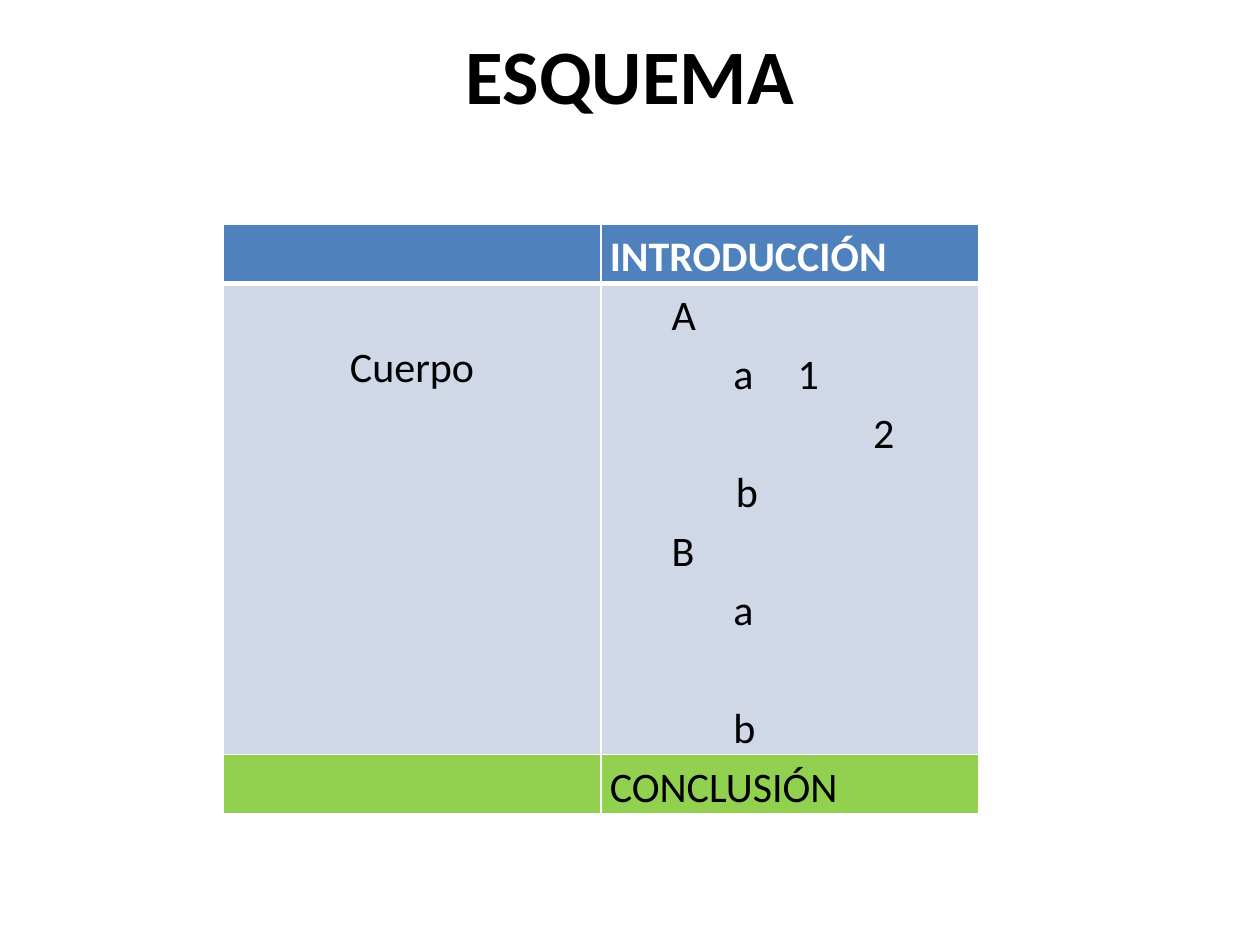
"""Build the ESQUEMA slide: a title above a three-row outline table."""
from dataclasses import dataclass

from lxml.etree import SubElement
from pptx import Presentation
from pptx.dml.color import RGBColor
from pptx.enum.text import MSO_ANCHOR as Anchor, PP_ALIGN as Align
from pptx.oxml.ns import qn
from pptx.table import _Cell as Cell
from pptx.text.text import _Paragraph as Paragraph
from pptx.util import Inches, Pt

BLACK = RGBColor(0x00, 0x00, 0x00)
WHITE = RGBColor(0xFF, 0xFF, 0xFF)
BLUE = RGBColor(0x4F, 0x81, 0xBD)
PALE = RGBColor(0xD0, 0xD8, 0xE8)
GREEN = RGBColor(0x92, 0xD0, 0x50)
STEP = 0.49


@dataclass(frozen=True)
class Line:
    text: str
    left: float = 0
    indent: float = 0
    before: float = 0
    align: Align = Align.LEFT


@dataclass(frozen=True)
class Band:
    height: float
    fill: RGBColor
    label: tuple[Line, ...]
    outline: tuple[Line, ...]
    color: RGBColor = BLACK
    bold: bool = False
    bottom_border: float = 1
    label_top: float = 0


BANDS = (
    Band(0.47, BLUE, (), (Line("INTRODUCCIÓN"),), WHITE, True, 3),
    Band(3.74, PALE, (Line("Cuerpo", align=Align.CENTER),), (
        Line("A", STEP),
        Line("a\t1", STEP, STEP),
        Line("2", 2.09),
        Line("b", 1),
        Line("B", STEP),
        Line("a", STEP, STEP),
        Line("b", STEP, STEP, before=33.7),
    ), label_top=0.41),
    Band(0.47, GREEN, (), (Line("CONCLUSIÓN"),)),
)


def style(target: object, values: dict[str, object]) -> None:
    """Set every named attribute on the target."""
    for name, value in values.items():
        setattr(target, name, value)


def write(para: Paragraph, text: str, size: float, color: RGBColor, bold: bool) -> None:
    """Add one formatted span to a paragraph."""
    span = para.add_run()
    span.text = text
    style(span.font, {"name": "Calibri", "size": Pt(size), "bold": bold})
    span.font.color.rgb = color


def draw_borders(cell: Cell, bottom: float) -> None:
    """Give the cell white borders, with its own bottom width."""
    properties = cell._tc.get_or_add_tcPr()
    widths = {"a:lnL": 1, "a:lnR": 1, "a:lnT": 1, "a:lnB": bottom}
    for position, (tag, width) in enumerate(widths.items()):
        border = SubElement(properties, qn(tag), w=str(Pt(width)))
        fill = SubElement(border, qn("a:solidFill"))
        SubElement(fill, qn("a:srgbClr"), val=str(WHITE))
        properties.insert(position, border)


def fill_cell(cell: Cell, lines: tuple[Line, ...], band: Band, top: float = 0) -> None:
    """Colour a cell, draw its borders and write its lines."""
    style(cell, {
        "margin_left": Inches(0.07), "margin_right": Inches(0.07),
        "margin_top": Inches(top), "margin_bottom": 0,
        "vertical_anchor": Anchor.TOP,
    })
    cell.fill.solid()
    cell.fill.fore_color.rgb = band.fill
    draw_borders(cell, band.bottom_border)
    frame = cell.text_frame
    for index, line in enumerate(lines):
        para = frame.add_paragraph() if index else frame.paragraphs[0]
        style(para, {"alignment": line.align, "line_spacing": 1.15,
                     "space_before": Pt(line.before)})
        indents = para._p.get_or_add_pPr()
        indents.set("marL", str(Inches(line.left)))
        indents.set("indent", str(Inches(line.indent)))
        write(para, line.text, 24, band.color, band.bold)


def main() -> None:
    """Create the deck and save it."""
    deck = Presentation()
    style(deck, {"slide_width": Inches(10), "slide_height": Inches(7.5)})
    page = deck.slides.add_slide(deck.slide_layouts[5])

    title = page.shapes.title
    style(title, {"left": Inches(0.5), "top": Inches(0.22),
                  "width": Inches(9), "height": Inches(1.25)})
    style(title.text_frame, {"vertical_anchor": Anchor.TOP, "margin_top": 0})
    heading = title.text_frame.paragraphs[0]
    heading.alignment = Align.CENTER
    write(heading, "ESQUEMA", 44, BLACK, True)

    height = sum(band.height for band in BANDS)
    table = page.shapes.add_table(
        len(BANDS), 2, Inches(1.77), Inches(1.78), Inches(6), Inches(height)).table
    for row, band in zip(table.rows, BANDS):
        row.height = Inches(band.height)
        label, outline = row.cells
        fill_cell(label, band.label, band, band.label_top)
        fill_cell(outline, band.outline, band)

    deck.save("out.pptx")


if __name__ == "__main__":
    main()
